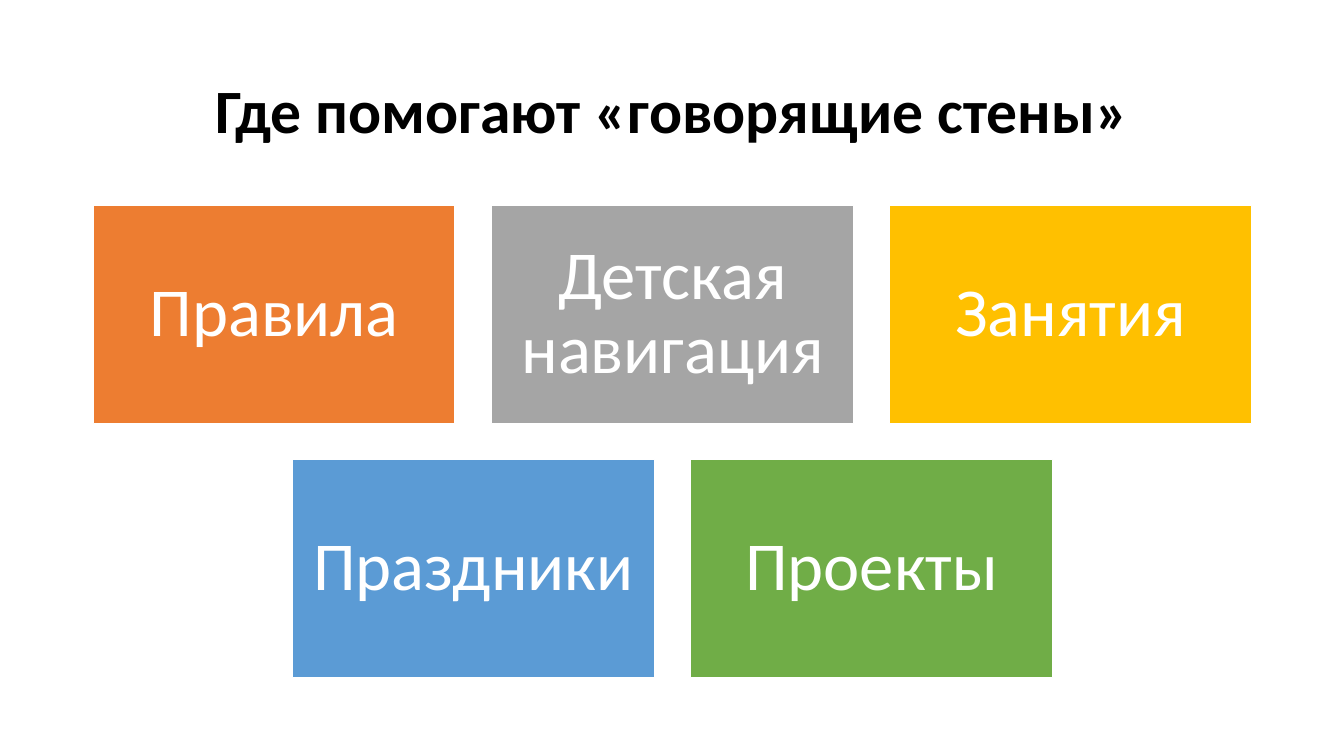
from dataclasses import dataclass

from pptx import Presentation
from pptx.dml.color import RGBColor
from pptx.enum.shapes import MSO_SHAPE
from pptx.enum.text import MSO_ANCHOR, PP_ALIGN
from pptx.util import Inches, Pt


@dataclass(frozen=True)
class Theme:
    font: str = "Calibri"
    black: str = "000000"
    white: str = "FFFFFF"
    orange: str = "ED7D31"
    gray: str = "A5A5A5"
    gold: str = "FFC000"
    blue: str = "5B9BD5"
    green: str = "70AD47"
    title: int = 44
    label: int = 49


theme = Theme()


def write(shape, text, size, color, bold=False):
    """Put one centred, styled paragraph in the shape."""
    frame = shape.text_frame
    frame.word_wrap = True
    frame.vertical_anchor = MSO_ANCHOR.MIDDLE
    frame.text = text
    para = frame.paragraphs[0]
    para.alignment = PP_ALIGN.CENTER
    para.line_spacing = 0.9
    font = para.runs[0].font
    font.name = theme.font
    font.size = Pt(size)
    font.bold = bold
    font.color.rgb = RGBColor.from_string(color)


deck = Presentation()
deck.slide_width = Inches(13.33)
deck.slide_height = Inches(7.5)
slide = deck.slides.add_slide(deck.slide_layouts[6])

title = slide.shapes.add_textbox(Inches(0.92), Inches(0.4), Inches(11.5), Inches(1.45))
write(title, "Где помогают «говорящие стены»", theme.title, theme.black, bold=True)

rows = [
    [("Правила", theme.orange), ("Детская навигация", theme.gray), ("Занятия", theme.gold)],
    [("Праздники", theme.blue), ("Проекты", theme.green)],
]
width, height, gap = 3.59, 2.16, 0.36
center, top = 6.67, 2.04

for r, row in enumerate(rows):
    span = len(row) * width + (len(row) - 1) * gap
    left = center - span / 2
    for c, (label, color) in enumerate(row):
        card = slide.shapes.add_shape(
            MSO_SHAPE.RECTANGLE,
            Inches(left + c * (width + gap)), Inches(top + r * (height + gap)),
            Inches(width), Inches(height),
        )
        card.shadow.inherit = False
        card.fill.solid()
        card.fill.fore_color.rgb = RGBColor.from_string(color)
        card.line.color.rgb = RGBColor.from_string(theme.white)
        card.line.width = Pt(1)
        frame = card.text_frame
        frame.margin_left = frame.margin_right = Inches(0.2)
        frame.margin_top = frame.margin_bottom = Inches(0.2)
        write(card, label, theme.label, theme.white)

deck.save("out.pptx")
